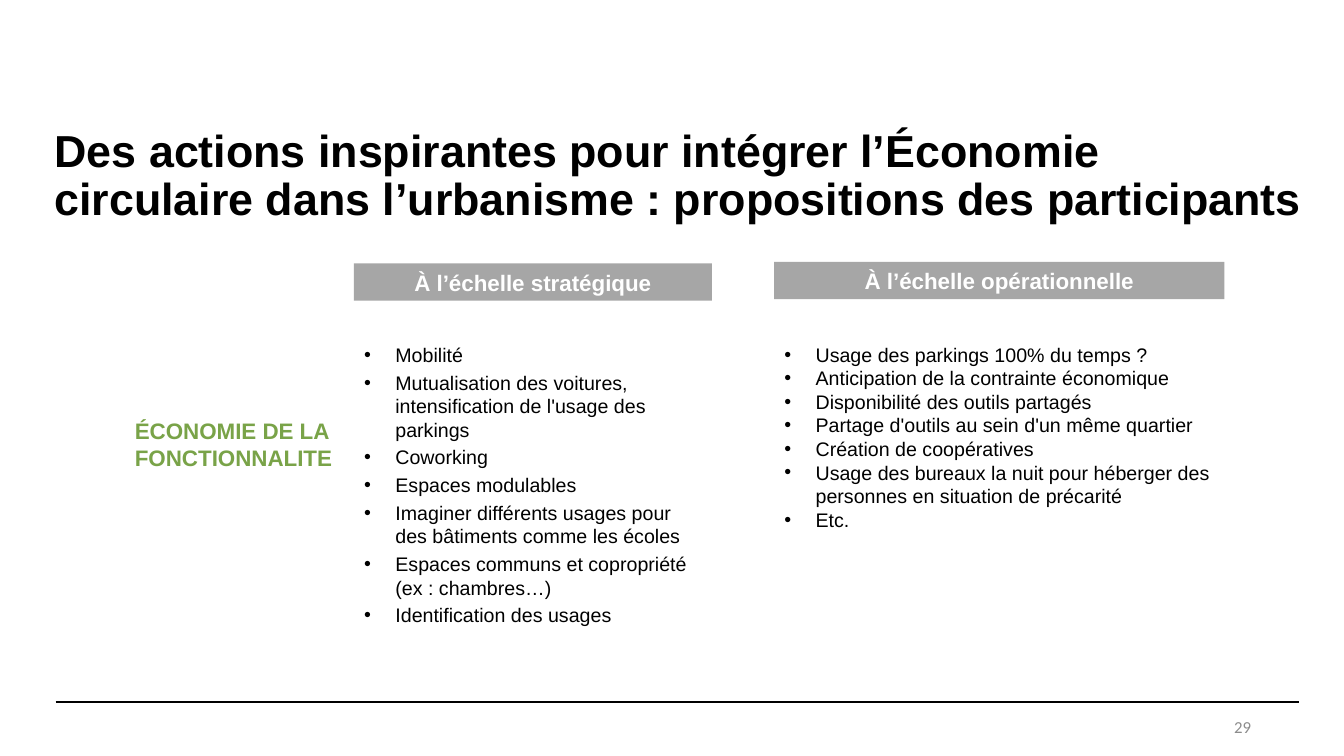
from lxml import etree
from pptx import Presentation
from pptx.dml.color import RGBColor
from pptx.enum.shapes import MSO_CONNECTOR, MSO_SHAPE
from pptx.enum.text import MSO_ANCHOR, MSO_AUTO_SIZE, PP_ALIGN
from pptx.oxml.ns import qn
from pptx.util import Cm, Pt

COLORS = {
    "text": "000000",
    "heading_fill": "A6A6A6",
    "heading_text": "FFFFFF",
    "theme_label": "79A348",
    "page_number": "8C8C8C",
}


def write(shape, lines, size, color, bold=False, align=PP_ALIGN.LEFT,
          anchor=MSO_ANCHOR.TOP, font_name="Arial", bullet=False, after=0):
    frame = shape.text_frame
    frame.word_wrap = True
    frame.auto_size = MSO_AUTO_SIZE.NONE
    frame.vertical_anchor = anchor
    frame.text = "\n".join(lines)
    for paragraph in frame.paragraphs:
        if bullet:
            properties = paragraph._p.get_or_add_pPr()
            properties.set("marL", str(Cm(0.79)))
            properties.set("indent", str(-Cm(0.79)))
            etree.SubElement(properties, qn("a:buFont")).set("typeface", "Arial")
            etree.SubElement(properties, qn("a:buChar")).set("char", "•")
        paragraph.alignment = align
        paragraph.space_before = Pt(0)
        paragraph.space_after = Pt(after)
        paragraph.font.name = font_name
        paragraph.font.size = Pt(size)
        paragraph.font.bold = bold
        paragraph.font.color.rgb = RGBColor.from_string(COLORS[color])


def place(shape, left, top, width, height):
    shape.left, shape.top = Cm(left), Cm(top)
    shape.width, shape.height = Cm(width), Cm(height)


prs = Presentation()
prs.slide_width, prs.slide_height = Cm(33.87), Cm(19.05)
slide = prs.slides.add_slide(prs.slide_layouts[3])
shapes = slide.shapes

footer_rule = shapes.add_connector(
    MSO_CONNECTOR.STRAIGHT, Cm(1.4), Cm(17.69), Cm(32.73), Cm(17.69))
footer_rule.line.color.rgb = RGBColor.from_string(COLORS["text"])
footer_rule.line.width = Pt(1.5)
etree.SubElement(footer_rule._element.spPr, qn("a:effectLst"))

title = shapes.title
place(title, 1.12, 2.13, 31.98, 3.68)
write(title, ["Des actions inspirantes pour intégrer l’Économie circulaire "
              "dans l’urbanisme : propositions des participants"],
      32, "text", bold=True, anchor=MSO_ANCHOR.BOTTOM)
title.text_frame.paragraphs[0].line_spacing = 0.9

scales = [
    ("À l’échelle stratégique", 8.92, 6.64, 9.02, 9.02, 7.47, 3, [
        "Mobilité",
        "Mutualisation des voitures, intensification de l'usage des parkings",
        "Coworking",
        "Espaces modulables",
        "Imaginer différents usages pour des bâtiments comme les écoles",
        "Espaces communs et copropriété (ex : chambres…)",
        "Identification des usages",
    ]),
    ("À l’échelle opérationnelle", 19.51, 6.6, 11.35, 12.12, 5.03, 0, [
        "Usage des parkings 100% du temps ?",
        "Anticipation de la contrainte économique",
        "Disponibilité des outils partagés",
        "Partage d'outils au sein d'un même quartier",
        "Création de coopératives",
        "Usage des bureaux la nuit pour héberger des personnes en situation de précarité",
        "Etc.",
    ]),
]
for index, (scale, left, top, heading_width, list_width, list_height,
            after, actions) in enumerate(scales, start=1):
    action_list = slide.placeholders[index]
    place(action_list, left, 8.51, list_width, list_height)
    write(action_list, actions, 14, "text", bullet=True, after=after)

    heading = shapes.add_shape(
        MSO_SHAPE.RECTANGLE, Cm(left), Cm(top), Cm(heading_width), Cm(0.94))
    heading.shadow.inherit = False
    heading.fill.solid()
    heading.fill.fore_color.rgb = RGBColor.from_string(COLORS["heading_fill"])
    heading.line.fill.background()
    write(heading, [scale], 16, "heading_text", bold=True,
          align=PP_ALIGN.CENTER, anchor=MSO_ANCHOR.MIDDLE)

theme_label = shapes.add_textbox(Cm(3.15), Cm(10.39), Cm(5.79), Cm(1.6))
write(theme_label, ["ÉCONOMIE DE LA FONCTIONNALITE"], 16, "theme_label", bold=True)

page_number = shapes.add_textbox(Cm(23.93), Cm(17.8), Cm(7.85), Cm(1.02))
write(page_number, ["29"], 12, "page_number", align=PP_ALIGN.RIGHT,
      anchor=MSO_ANCHOR.MIDDLE, font_name="Calibri")

prs.save("out.pptx")
